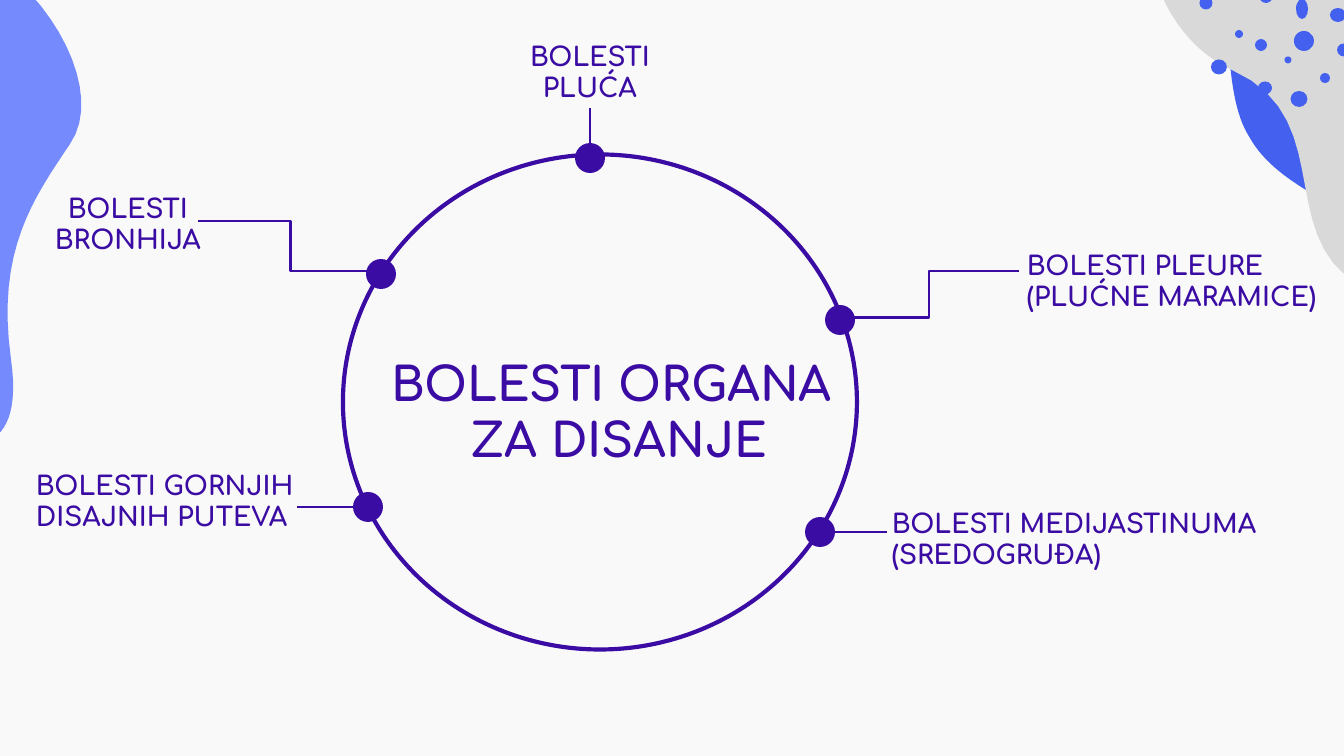
from dataclasses import dataclass

from lxml.etree import SubElement
from pptx import Presentation
from pptx.dml.color import RGBColor
from pptx.enum.shapes import MSO_CONNECTOR, MSO_SHAPE
from pptx.enum.text import MSO_ANCHOR, PP_ALIGN
from pptx.oxml.ns import qn
from pptx.slide import Slide
from pptx.util import Emu, Pt

EMU_PER_PX = 914400 / 134.4
CURVE_STEPS = 16


@dataclass(frozen=True)
class Theme:
    background: RGBColor = RGBColor(0xFA, 0xF9, 0xF9)
    ink: RGBColor = RGBColor(0x3A, 0x0C, 0xA3)
    blue: RGBColor = RGBColor(0x43, 0x61, 0xEE)
    light_blue: RGBColor = RGBColor(0x75, 0x8B, 0xFD)
    grey: RGBColor = RGBColor(0xD9, 0xD9, 0xD9)
    font: str = "Comfortaa"
    title_size: int = 25
    label_size: int = 14
    ring_width: float = 2.25
    line_width: float = 1.5


@dataclass(frozen=True)
class Blob:
    """Start point, then line ends (2 numbers) or cubic curves (6 numbers)."""
    color: RGBColor
    start: tuple[int, int]
    segments: list[tuple[int, ...]]


@dataclass(frozen=True)
class Branch:
    text: str
    box: tuple[int, int, int, int]
    dot: tuple[int, int]
    line: tuple[int, int, int, int]
    align: PP_ALIGN = PP_ALIGN.LEFT


THEME = Theme()
DOT_SIZE = 30

LEAF = Blob(THEME.blue, (1966, 56), [
    (1965, 48, 1964, 39, 1961, 27), (1945, -39, 1919, -110, 1886, -175),
    (1837, -265, 1771, -341, 1689, -368), (1642, -384, 1594, -383, 1547, -379),
    (1511, -375, 1473, -368, 1442, -348), (1418, -332, 1398, -310, 1379, -288),
    (1322, -222, 1263, -151, 1239, -58), (1228, -16, 1226, 28, 1231, 73),
    (1232, 81), (1235, 101, 1239, 121, 1250, 138),
    (1263, 161, 1285, 177, 1306, 190), (1399, 237, 1500, 218, 1595, 199),
    (1684, 181, 1771, 165, 1860, 148), (1925, 134, 1978, 142, 1966, 56)])
CORNER = Blob(THEME.grey, (1152, -30), [
    (1383, -30), (1383, 296), (1262, 254, 1347, 121, 1232, 70),
    (1185, 48, 1163, 5, 1152, -30)])
WAVE = Blob(THEME.light_blue, (-20, -47), [
    (-19, 444), (0, 439, 20, 421, 11, 359), (-4, 250, 34, 198, 70, 144),
    (105, 94, 55, -4, -20, -47)])

# Centre x, centre y, width, height
SPECKLES = [
    (1304, 41, 20, 20), (1338, 15, 16, 14), (1344, 50, 14, 13),
    (1299, 99, 17, 16), (1261, 45, 12, 12), (1302, 9, 12, 20),
    (1325, 78, 10, 10), (1265, 88, 14, 13), (1266, -3, 13, 12),
    (1288, 60, 7, 7), (1219, 67, 16, 15), (1206, 3, 13, 13),
    (1239, 34, 8, 8)]

BRANCHES = [
    Branch("BOLESTI PLUĆA", (489, 40, 202, 78), (590, 158),
           (590, 155, 590, 108), PP_ALIGN.CENTER),
    Branch("BOLESTI GORNJIH DISAJNIH PUTEVA", (36, 469, 261, 108), (368, 507),
           (367, 507, 297, 507)),
    Branch("BOLESTI PLEURE (PLUĆNE MARAMICE)", (1027, 249, 308, 108),
           (840, 320), (839, 318, 1019, 271)),
    Branch("BOLESTI MEDIJASTINUMA (SREDOGRUĐA)", (892, 507, 372, 108),
           (820, 532), (810, 532, 887, 532)),
    Branch("BOLESTI BRONHIJA", (27, 192, 202, 108), (381, 274),
           (383, 271, 198, 221), PP_ALIGN.CENTER)]


def px(length: float) -> Emu:
    return Emu(round(length * EMU_PER_PX))


def add_blob(slide: Slide, blob: Blob) -> None:
    points = [blob.start]
    for segment in blob.segments:
        if len(segment) == 2:
            points.append(segment)
            continue
        x0, y0 = points[-1]
        x1, y1, x2, y2, x3, y3 = segment
        for step in range(1, CURVE_STEPS + 1):
            t = step / CURVE_STEPS
            a, b, c, d = (1 - t) ** 3, 3 * t * (1 - t) ** 2, 3 * t * t * (1 - t), t ** 3
            points.append((a * x0 + b * x1 + c * x2 + d * x3,
                           a * y0 + b * y1 + c * y2 + d * y3))
    outline = [(px(x), px(y)) for x, y in points]
    builder = slide.shapes.build_freeform(*outline[0], scale=1.0)
    builder.add_line_segments(outline[1:], close=True)
    shape = builder.convert_to_shape()
    shape.shadow.inherit = False
    shape.fill.solid()
    shape.fill.fore_color.rgb = blob.color
    shape.line.fill.background()


def add_ellipse(slide: Slide, center_x: int, center_y: int, width: int, height: int,
                *, fill: RGBColor | None = None, line: RGBColor | None = None) -> None:
    shape = slide.shapes.add_shape(
        MSO_SHAPE.OVAL, px(center_x - width / 2), px(center_y - height / 2),
        px(width), px(height))
    shape.shadow.inherit = False
    if fill is None:
        shape.fill.background()
    else:
        shape.fill.solid()
        shape.fill.fore_color.rgb = fill
    if line is None:
        shape.line.fill.background()
    else:
        shape.line.color.rgb = line
        shape.line.width = Pt(THEME.ring_width)


def add_line(slide: Slide, x1: int, y1: int, x2: int, y2: int) -> None:
    straight = x1 == x2 or y1 == y2
    kind = MSO_CONNECTOR.STRAIGHT if straight else MSO_CONNECTOR.ELBOW
    connector = slide.shapes.add_connector(kind, px(x1), px(y1), px(x2), px(y2))
    connector.line.color.rgb = THEME.ink
    connector.line.width = Pt(THEME.line_width)
    SubElement(connector._element.spPr, qn("a:effectLst"))


def add_text(slide: Slide, text: str, box: tuple[int, int, int, int], *,
             size: int = THEME.label_size, align: PP_ALIGN = PP_ALIGN.LEFT) -> None:
    frame = slide.shapes.add_textbox(*map(px, box)).text_frame
    frame.word_wrap = True
    frame.vertical_anchor = MSO_ANCHOR.TOP
    frame.margin_left = frame.margin_right = frame.margin_top = frame.margin_bottom = 0
    frame.text = text
    for paragraph in frame.paragraphs:
        paragraph.alignment = align
        paragraph.font.name = THEME.font
        paragraph.font.size = Pt(size)
        paragraph.font.bold = True
        paragraph.font.color.rgb = THEME.ink


def main() -> None:
    presentation = Presentation()
    presentation.slide_width, presentation.slide_height = px(1344), px(756)
    slide = presentation.slides.add_slide(presentation.slide_layouts[6])
    slide.background.fill.solid()
    slide.background.fill.fore_color.rgb = THEME.background

    # Corner decoration
    add_blob(slide, LEAF)
    add_blob(slide, CORNER)
    for speckle in SPECKLES:
        add_ellipse(slide, *speckle, fill=THEME.blue)
    add_blob(slide, WAVE)

    # Central topic
    add_text(slide, "BOLESTI ORGANA \nZA DISANJE", (48, 355, 1141, 94),
             size=THEME.title_size, align=PP_ALIGN.CENTER)

    # Branches around the ring
    for branch in BRANCHES:
        add_text(slide, branch.text, branch.box, align=branch.align)
        add_line(slide, *branch.line)
        add_ellipse(slide, *branch.dot, DOT_SIZE, DOT_SIZE, fill=THEME.ink)
    add_ellipse(slide, 600, 402, 514, 495, line=THEME.ink)

    presentation.save("out.pptx")


if __name__ == "__main__":
    main()
